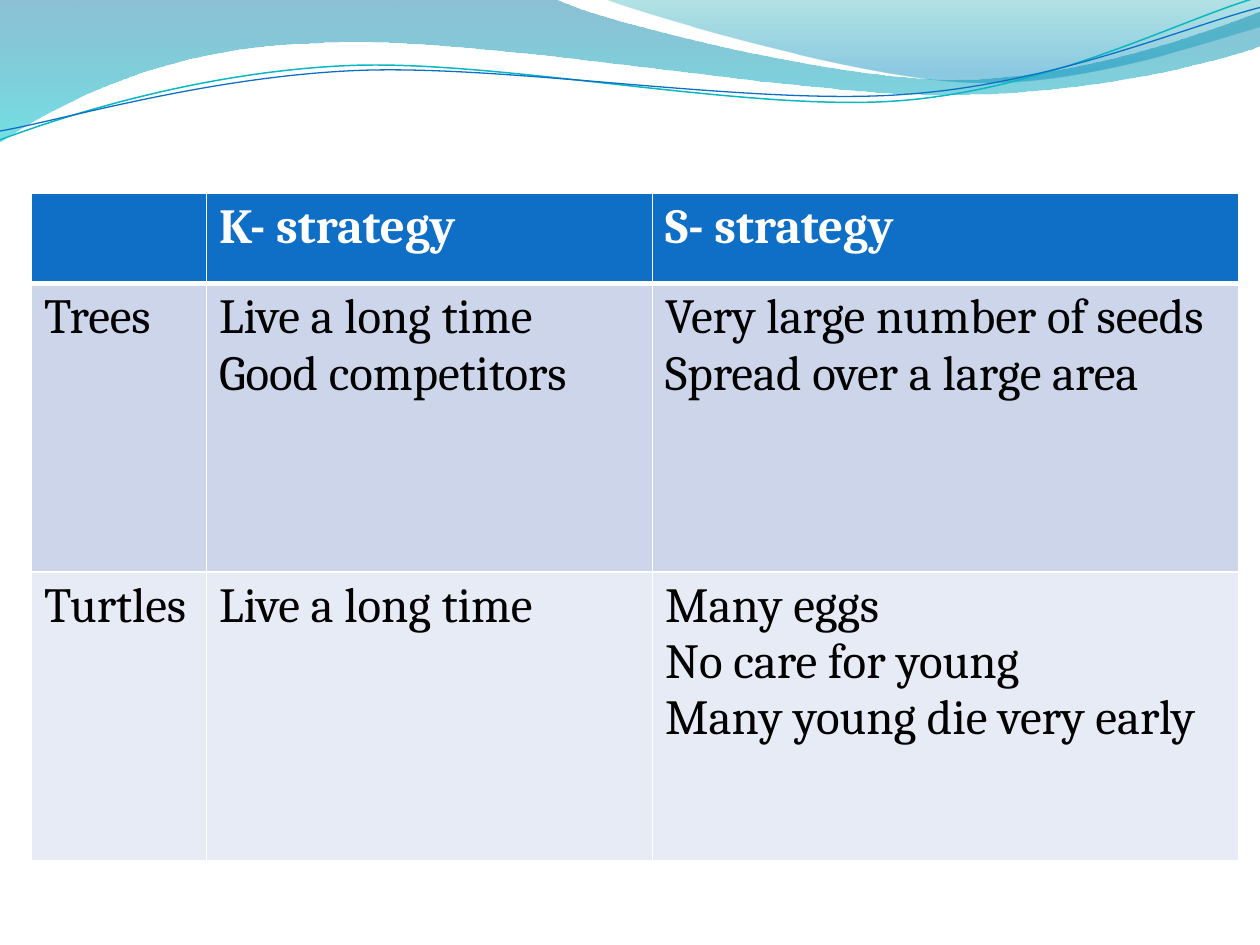
"""Build a slide comparing K- and S-strategies under a wave banner."""
from dataclasses import dataclass
from math import cos, radians, sin
from typing import Optional

from lxml.etree import SubElement
from pptx import Presentation
from pptx.dml.color import RGBColor
from pptx.oxml.ns import qn
from pptx.util import Inches, Pt

COLORS = {
    "header": "0F6FC6", "trees": "CCD5EA", "turtles": "E7EBF5",
    "white": "FFFFFF", "black": "000000", "teal": "0AB8BF", "blue": "0F6FC6",
    "deep": "0074A1", "aqua": "00C6CF", "sea": "00A1A9", "sky": "008BBF",
}
UNIT = Inches(1)
GRID_COLS, GRID_ROWS = 10, 7.5
TILT = -2.7
FONT = "Cambria"
TEXT_SIZE = 28
Point = tuple[float, float]


@dataclass
class Stop:
    position: float
    color: str
    opacity: int


@dataclass
class Wave:
    """Start point, then segments of one point (line) or three (Bezier curve)."""
    start: Point
    segments: list[list[Point]]
    stops: Optional[list[Stop]] = None
    line: Optional[str] = None
    width: float = 0
    pivot: Optional[Point] = None


@dataclass
class Row:
    fill: str
    text: str
    bold: bool
    height: float
    top: float
    bottom: float
    cells: list[str]


WAVES = [
    Wave((0, 0), [
        [(4.4, -0.01)],
        [(4.76, 0.17), (6.64, 0.63), (7.58, 0.63)],
        [(8.53, 0.63), (9.58, 0.26), (10, 0.09)],
        [(10.01, 0.36)],
        [(9.83, 0.44), (8.7, 0.76), (7.46, 0.75)],
        [(6.22, 0.75), (3.82, 0.28), (2.57, 0.34)],
        [(1.29, 0.36), (0.46, 0.83), (-0.01, 1.13)],
        [(0, 0)],
    ], stops=[Stop(0, "deep", 45), Stop(1, "aqua", 55)]),
    Wave((4.79, -0.01), [
        [(5.09, 0.11), (6.82, 0.62), (7.69, 0.65)],
        [(8.56, 0.69), (9.61, 0.32), (10, 0.21)],
        [(10, 0)],
        [(4.79, -0.01)],
    ], stops=[Stop(0, "sea", 30), Stop(0.8, "sky", 45)]),
    Wave((0, 1.11), [
        [(0.48, 0.93), (1.58, 0.57), (2.77, 0.52)],
        [(3.95, 0.47), (5.93, 0.89), (7.13, 0.8)],
        [(8.33, 0.71), (9.38, 0.15), (9.98, -0.02)],
    ], line="teal", width=0.85, pivot=(4.99, 0.57)),
    Wave((0, 1.04), [
        [(0.47, 0.96), (1.64, 0.61), (2.83, 0.56)],
        [(4.03, 0.51), (5.97, 0.84), (7.17, 0.75)],
        [(8.36, 0.67), (9.41, 0.21), (10, 0.06)],
    ], line="blue", width=0.75, pivot=(5, 0.59)),
]

TABLE_AT = (0.25, 1.53)
COL_WIDTHS = [1.39, 3.54, 4.65]
ROWS = [
    Row("header", "white", True, 0.72, 1, 3, ["", "K- strategy", "S- strategy"]),
    Row("trees", "black", False, 2.29, 3, 1, [
        "Trees", "Live a long time\nGood competitors",
        "Very large number of seeds\nSpread over a large area"]),
    Row("turtles", "black", False, 2.29, 1, 1, [
        "Turtles", "Live a long time",
        "Many eggs\nNo care for young\nMany young die very early"]),
]


def grid(n: float) -> int:
    """Convert grid units to a length."""
    return round(n * UNIT)


def rgb(name: str) -> RGBColor:
    """Look up a named colour."""
    return RGBColor.from_string(COLORS[name])


def place(point: Point, pivot: Optional[Point]) -> tuple[int, int]:
    """Convert a point to lengths, levelling it around a pivot if there is one."""
    x, y = point
    if pivot:
        dx, dy = x - pivot[0], y - pivot[1]
        c, s = cos(radians(TILT)), sin(radians(TILT))
        x, y = pivot[0] + dx * c + dy * s, pivot[1] - dx * s + dy * c
    return grid(x), grid(y)


def bend(sp, segments: list[list[Point]]) -> None:
    """Turn each group of three line segments into one curve."""
    outline = next(sp._element.iter(qn("a:path")))
    lines = iter(outline.findall(qn("a:lnTo")))
    for seg in segments:
        group = [next(lines) for _ in seg]
        if len(group) == 3:
            curve = SubElement(outline, qn("a:cubicBezTo"))
            group[0].addprevious(curve)
            for ln in group:
                curve.append(ln[0])
                outline.remove(ln)


def draw_wave(slide, wave: Wave) -> None:
    """Draw one wave as a gradient band or a thin line."""
    builder = slide.shapes.build_freeform(*place(wave.start, wave.pivot))
    points = [place(pt, wave.pivot) for seg in wave.segments for pt in seg]
    builder.add_line_segments(points, close=wave.stops is not None)
    sp = builder.convert_to_shape()
    bend(sp, wave.segments)
    sp.shadow.inherit = False
    if wave.stops is None:
        sp.rotation = TILT
        sp.fill.background()
        sp.line.color.rgb = rgb(wave.line)
        sp.line.width = Pt(wave.width)
        return
    sp.line.fill.background()
    sp.fill.gradient()
    sp.fill.gradient_angle = 270
    for gs, stop in zip(sp.fill.gradient_stops, wave.stops):
        gs.color.rgb = rgb(stop.color)
        gs.position = stop.position
    for clr, stop in zip(sp._element.spPr.iter(qn("a:srgbClr")), wave.stops):
        SubElement(clr, qn("a:alpha"), val=str(stop.opacity * 1000))


def draw_borders(cell, top: float, bottom: float) -> None:
    """Give a cell white borders."""
    tc_pr = cell._tc.get_or_add_tcPr()
    for side, width in {"L": 1, "R": 1, "T": top, "B": bottom}.items():
        ln = SubElement(tc_pr, qn(f"a:ln{side}"), w=str(Pt(width)))
        fill = SubElement(ln, qn("a:solidFill"))
        SubElement(fill, qn("a:srgbClr"), val=COLORS["white"])


def fill_cell(cell, text: str, row: Row) -> None:
    """Write and format one cell."""
    draw_borders(cell, row.top, row.bottom)
    cell.fill.solid()
    cell.fill.fore_color.rgb = rgb(row.fill)
    cell.text_frame.text = text
    for p in cell.text_frame.paragraphs:
        for r in p.runs:
            r.font.name = FONT
            r.font.size = Pt(TEXT_SIZE)
            r.font.bold = row.bold
            r.font.color.rgb = rgb(row.text)


def draw_table(slide) -> None:
    """Draw the strategy table."""
    width, height = sum(COL_WIDTHS), sum(row.height for row in ROWS)
    box = map(grid, (*TABLE_AT, width, height))
    table = slide.shapes.add_table(len(ROWS), len(COL_WIDTHS), *box).table
    for col, w in zip(table.columns, COL_WIDTHS):
        col.width = grid(w)
    for line, row in zip(table.rows, ROWS):
        line.height = grid(row.height)
        for cell, text in zip(line.cells, row.cells):
            fill_cell(cell, text, row)


if __name__ == "__main__":
    prs = Presentation()
    prs.slide_width, prs.slide_height = grid(GRID_COLS), grid(GRID_ROWS)
    s = prs.slides.add_slide(prs.slide_layouts[6])
    for wave in WAVES:
        draw_wave(s, wave)
    draw_table(s)
    prs.save("out.pptx")
